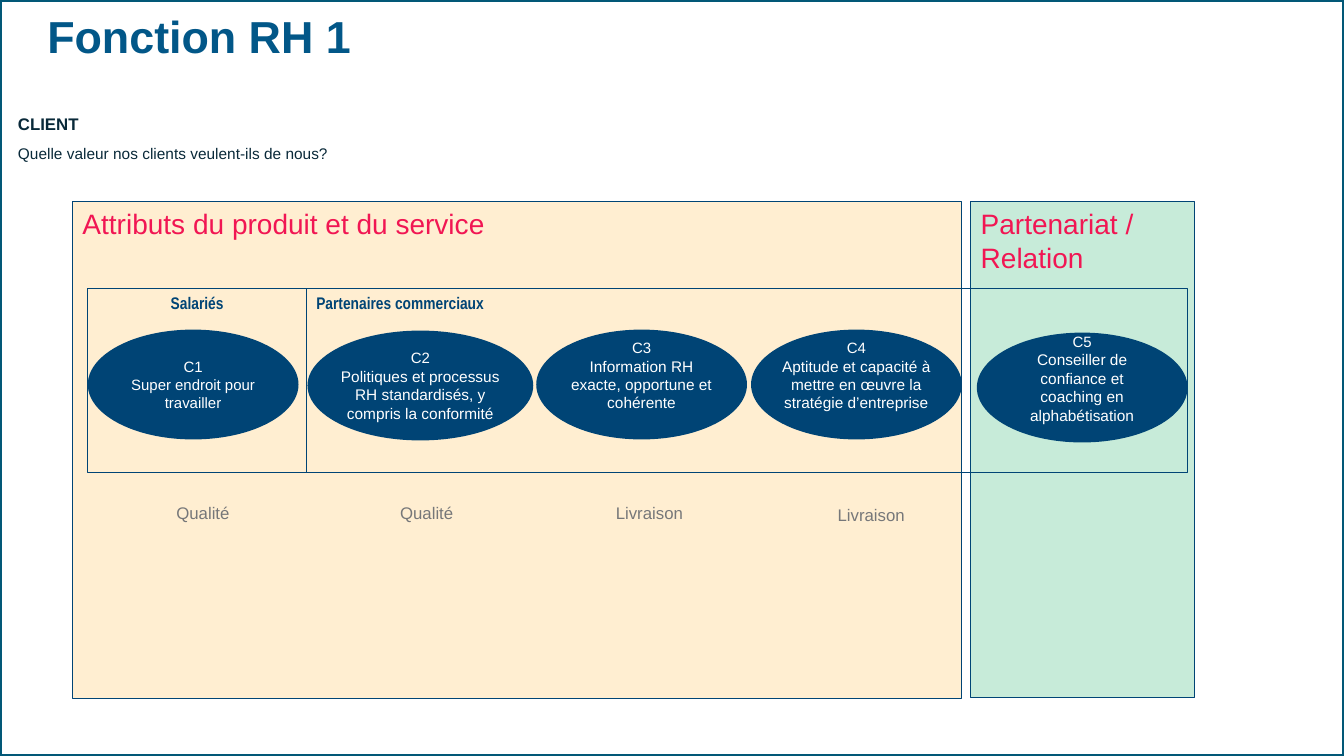
from dataclasses import dataclass

from lxml.etree import SubElement
from pptx import Presentation
from pptx.dml.color import RGBColor
from pptx.enum.shapes import MSO_SHAPE
from pptx.enum.text import MSO_ANCHOR, PP_ALIGN
from pptx.oxml.ns import qn
from pptx.util import Inches, Pt

SLIDE_W, SLIDE_H = Inches(13.33), Inches(7.5)


@dataclass(frozen=True)
class Theme:
    frame: str = "025877"
    title: str = "025788"
    navy: str = "004475"
    orange: str = "FFAA1B"
    mint: str = "C7EBD9"
    pink: str = "F11653"
    ink: str = "092939"
    grey: str = "767779"
    white: str = "FFFFFF"
    font: str = "Arial"
    narrow: str = "Arial Narrow"
    title_size: float = 32
    panel_size: float = 20
    label_size: float = 12
    body_size: float = 11
    code_size: float = 10.7


T = Theme()


def across(share):
    return round(SLIDE_W * share / 100)


def down(share):
    return round(SLIDE_H * share / 100)


def place(box):
    """Turn left, top, width, height in percent of the slide into lengths."""
    x, y, w, h = box
    return across(x), down(y), across(w), down(h)


def write(p, text, size, color, font=T.font, bold=False, align=PP_ALIGN.LEFT):
    p.alignment = align
    r = p.add_run()
    r.text = text
    r.font.name = font
    r.font.size = Pt(size)
    r.font.bold = bold
    r.font.color.rgb = RGBColor.from_string(color)


def add_text(slide, box, wrap=True):
    tf = slide.shapes.add_textbox(*place(box)).text_frame
    tf.word_wrap = wrap
    return tf


def add_block(slide, box, kind=MSO_SHAPE.RECTANGLE, fill=None, alpha=None,
              line=T.navy, weight=0.75):
    sp = slide.shapes.add_shape(kind, *place(box))
    sp.shadow.inherit = False
    if fill:
        sp.fill.solid()
        sp.fill.fore_color.rgb = RGBColor.from_string(fill)
        if alpha:
            clr = sp.fill._xPr.find(qn("a:solidFill"))[0]
            SubElement(clr, qn("a:alpha")).set("val", str(alpha * 1000))
    else:
        sp.fill.background()
    if line:
        sp.line.color.rgb = RGBColor.from_string(line)
        sp.line.width = Pt(weight)
    else:
        sp.line.fill.background()
    tf = sp.text_frame
    tf.word_wrap = True
    tf.vertical_anchor = MSO_ANCHOR.TOP
    return tf


def add_panel(slide, box, heading, **look):
    tf = add_block(slide, box, **look)
    write(tf.paragraphs[0], heading, T.panel_size, T.pink)


def add_group(slide, box, heading, align):
    tf = add_block(slide, box)
    write(tf.paragraphs[0], heading, T.label_size, T.navy, T.narrow, True, align)


def add_goal(slide, x, y, w, code, text, size=T.body_size, lift=0):
    """Draw one goal ellipse; lift is extra room kept free under its text."""
    tf = add_block(slide, (x, y, w, 14.53), MSO_SHAPE.OVAL, T.navy, line=None)
    tf.vertical_anchor = MSO_ANCHOR.MIDDLE
    tf.margin_left = tf.margin_right = 0
    tf.margin_bottom = down(0.67 + lift)
    write(tf.paragraphs[0], code, T.code_size, T.white, align=PP_ALIGN.CENTER)
    write(tf.add_paragraph(), text, size, T.white, align=PP_ALIGN.CENTER)


def add_title(slide, text):
    tf = add_text(slide, (2.78, 3.73, 74.03, 8.53))
    tf.vertical_anchor = MSO_ANCHOR.MIDDLE
    tf.margin_bottom = down(6.27)
    tf.paragraphs[0].line_spacing = 0.9
    write(tf.paragraphs[0], text, T.title_size, T.title, bold=True)


def add_question(slide, heading, question):
    tf = add_text(slide, (0.6, 14.4, 44.55, 11.47))
    write(tf.paragraphs[0], heading, T.label_size, T.ink, bold=True)
    p = tf.add_paragraph()
    p.space_before = Pt(7)
    write(p, question, T.body_size, T.ink)


def main():
    prs = Presentation()
    prs.slide_width, prs.slide_height = SLIDE_W, SLIDE_H
    slide = prs.slides.add_slide(prs.slide_layouts[6])

    add_block(slide, (0, 0, 100, 100), line=T.frame, weight=3)
    add_panel(slide, (72.23, 26.67, 16.65, 65.6), "Partenariat / Relation",
              fill=T.mint)
    add_panel(slide, (5.4, 26.67, 66.15, 65.73),
              "Attributs du produit et du service", fill=T.orange, alpha=20)
    add_title(slide, "Fonction RH 1")

    for x, y, w, label in [
        (12.38, 65.87, 5.48, "Qualité"),
        (29.03, 65.87, 5.48, "Qualité"),
        (45.08, 65.87, 6.53, "Livraison"),
        (61.58, 66.13, 6.53, "Livraison"),
    ]:
        tf = add_text(slide, (x, y, w, 4), wrap=False)
        write(tf.paragraphs[0], label, T.label_size, T.grey)

    add_group(slide, (6.53, 38.13, 16.28, 24.4), "Salariés", PP_ALIGN.CENTER)
    add_group(slide, (22.8, 38.13, 65.55, 24.4), "Partenaires commerciaux",
              PP_ALIGN.LEFT)
    add_question(slide, "CLIENT", "Quelle valeur nos clients veulent-ils de nous?")

    line = 2.4
    add_goal(slide, 6.53, 43.6, 15.68, "C1", "Super endroit pour travailler",
             size=T.code_size)
    add_goal(slide, 22.88, 43.73, 16.8, "C2",
             "Politiques et processus RH standardisés, y compris la conformité")
    add_goal(slide, 39.9, 43.6, 15.68, "C3",
             "Information RH exacte, opportune et cohérente", lift=line)
    add_goal(slide, 55.88, 43.6, 15.68, "C4",
             "Aptitude et capacité à mettre en œuvre la stratégie d’entreprise",
             lift=line)
    add_goal(slide, 72.68, 44, 15.68, "C5",
             "Conseiller de confiance et coaching en alphabétisation", lift=line)

    prs.save("out.pptx")


if __name__ == "__main__":
    main()
